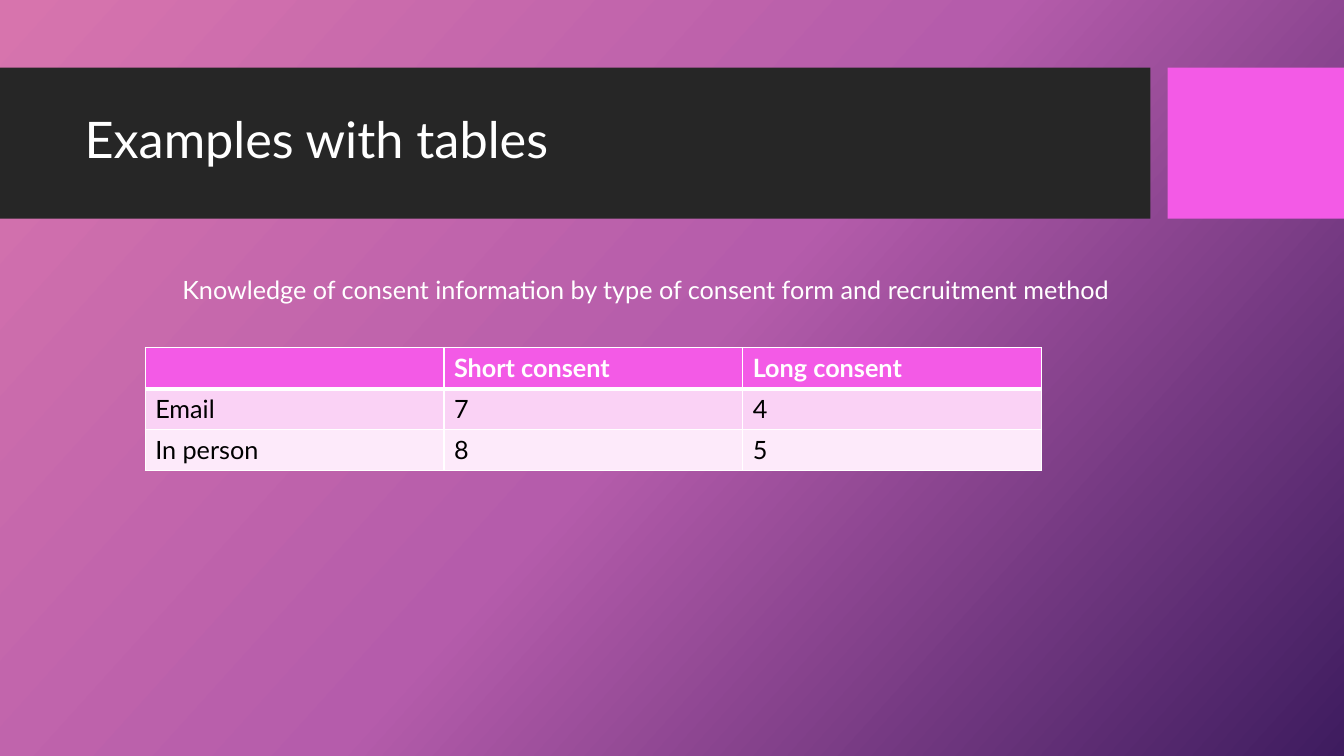
from copy import deepcopy
from dataclasses import dataclass

from lxml import etree
from pptx import Presentation
from pptx.dml.color import RGBColor
from pptx.enum import shapes, text
from pptx.oxml import ns
from pptx.util import Inches, Pt


@dataclass(frozen=True)
class Theme:
    font: str = "Lato"
    title_size: int = 36
    body_size: int = 18
    light: str = "FFFFFF"
    dark: str = "000000"
    band: str = "262626"
    accent: str = "F35AE6"
    row_fills: tuple = ("FAD2F5", "FDEAFA")
    gradient: tuple = ((0, "D774AD"), (0.5, "B55CAB"), (1, "3E1C5F"))
    gradient_angle: int = 42
    thin_line: float = 1
    thick_line: float = 3


THEME = Theme()
TABLE_ROWS = [
    ["", "Short consent", "Long consent"],
    ["Email", "7", "4"],
    ["In person", "8", "5"],
]


def style_text(para, size, color, bold=False):
    # Styling the paragraph font as well keeps an empty cell at the right size
    for font in [para.font] + [span.font for span in para.runs]:
        font.name = THEME.font
        font.size = Pt(size)
        font.bold = bold
        font.color.rgb = RGBColor.from_string(color)


def paint_background(page):
    fill = page.background.fill
    fill.gradient()
    fill.gradient_angle = 360 - THEME.gradient_angle
    stop_list = page.element.xpath(".//a:gsLst")[0]
    stop_list.append(deepcopy(stop_list[-1]))
    for stop, (position, color) in zip(fill.gradient_stops, THEME.gradient):
        stop.position = position
        stop.color.rgb = RGBColor.from_string(color)


def add_block(page, left, top, width, height, color):
    block = page.shapes.add_shape(
        shapes.MSO_SHAPE.RECTANGLE,
        Inches(left), Inches(top), Inches(width), Inches(height))
    block.shadow.inherit = False
    block.fill.solid()
    block.fill.fore_color.rgb = RGBColor.from_string(color)
    block.line.fill.background()


def add_label(page, left, top, width, height, words, size):
    box = page.shapes.add_textbox(
        Inches(left), Inches(top), Inches(width), Inches(height))
    frame = box.text_frame
    frame.word_wrap = True
    frame.vertical_anchor = text.MSO_ANCHOR.MIDDLE
    frame.text = words
    style_text(frame.paragraphs[0], size, THEME.light)
    return frame.paragraphs[0]


def add_title_band(page, left, top, width, height, title):
    accent_width, gap = 1.75, 0.17
    band_width = width - accent_width - gap
    add_block(page, left, top, band_width, height, THEME.band)
    add_block(page, left + width - accent_width, top, accent_width, height,
              THEME.accent)
    para = add_label(page, left + 0.74, top + 0.15, band_width - 0.9, 1.18,
                     title, THEME.title_size)
    para.line_spacing = 0.9


def set_borders(cell, top, bottom):
    widths = {"L": THEME.thin_line, "R": THEME.thin_line, "T": top, "B": bottom}
    properties = cell._tc.get_or_add_tcPr()
    # Border lines come before the fill in the cell properties
    for index, (side, width) in enumerate(widths.items()):
        line = etree.Element(ns.qn(f"a:ln{side}"), w=str(Pt(width)))
        solid = etree.SubElement(line, ns.qn("a:solidFill"))
        etree.SubElement(solid, ns.qn("a:srgbClr"), val=THEME.light)
        properties.insert(index, line)


def add_consent_table(page, left, top, width, height, rows):
    table = page.shapes.add_table(
        len(rows), len(rows[0]),
        Inches(left), Inches(top), Inches(width), Inches(height)).table
    table.horz_banding = False
    table.first_row = True
    for row_index, row in enumerate(rows):
        header = row_index == 0
        fill = THEME.accent if header else THEME.row_fills[(row_index - 1) % 2]
        for column_index, words in enumerate(row):
            cell = table.cell(row_index, column_index)
            cell.text = words
            style_text(cell.text_frame.paragraphs[0], THEME.body_size,
                       THEME.light if header else THEME.dark, header)
            cell.fill.solid()
            cell.fill.fore_color.rgb = RGBColor.from_string(fill)
            set_borders(
                cell,
                top=THEME.thick_line if row_index == 1 else THEME.thin_line,
                bottom=THEME.thick_line if header else THEME.thin_line)


def build_table_slide(deck):
    page = deck.slides.add_slide(deck.slide_layouts[6])
    paint_background(page)
    add_title_band(page, 0, 0.67, 13.33, 1.5, "Examples with tables")
    add_consent_table(page, 1.44, 3.45, 8.89, 1.22, TABLE_ROWS)
    add_label(
        page, 1.71, 2.67, 9.72, 0.4,
        "Knowledge of consent information by type of consent form "
        "and recruitment method", THEME.body_size)


def main():
    deck = Presentation()
    deck.slide_width = Inches(13.33)
    deck.slide_height = Inches(7.5)
    build_table_slide(deck)
    deck.save("out.pptx")


if __name__ == "__main__":
    main()
